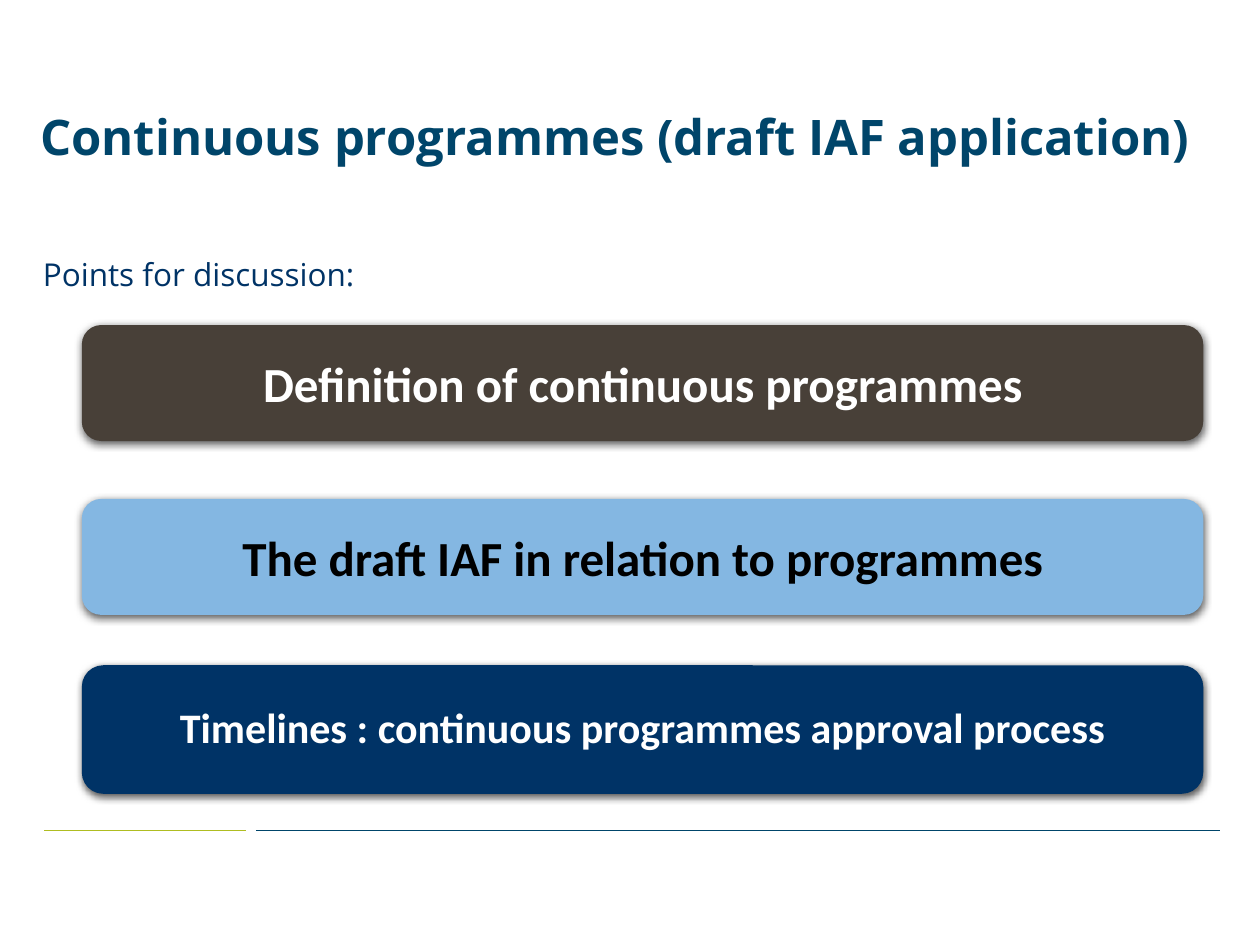
"""Build the slide on points for discussion about continuous programmes."""
from dataclasses import dataclass

from lxml.etree import SubElement
from pptx import Presentation
from pptx.dml.color import RGBColor
from pptx.enum.shapes import MSO_CONNECTOR, MSO_SHAPE
from pptx.enum.text import MSO_ANCHOR, MSO_AUTO_SIZE, PP_ALIGN
from pptx.oxml.ns import qn
from pptx.util import Inches, Pt

NAVY, TEAL, LIME = "003366", "00456A", "AFBD21"
WHITE, BLACK = "FFFFFF", "000000"


@dataclass
class Bar:
    text: str
    top: float
    high: float
    fill: str
    ink: str = WHITE
    size: int = 28
    space: float = 1.0


@dataclass
class Rule:
    left: float
    right: float
    tint: str


BARS = [
    Bar("Definition of continuous programmes", 2.58, 0.92, "484038"),
    Bar("The draft IAF in relation to programmes", 3.96, 0.92, "84B7E2", BLACK),
    Bar("Timelines : continuous programmes approval process", 5.28, 1.02, NAVY,
        size=24, space=0.9),
]
RULES = [Rule(0.35, 1.95, LIME), Rule(2.03, 9.68, TEAL)]


def color(code: str) -> RGBColor:
    return RGBColor.from_string(code)


def write(shape, text: str, *, size: int, ink: str, face: str = "Open Sans",
          bold: bool = False, align=PP_ALIGN.LEFT, anchor=MSO_ANCHOR.TOP,
          space: float = 0.9) -> None:
    frame = shape.text_frame
    frame.word_wrap = True
    frame.auto_size = MSO_AUTO_SIZE.NONE
    frame.vertical_anchor = anchor
    para = frame.paragraphs[0]
    para.alignment = align
    para.line_spacing = space
    para.space_before = Pt(0)
    run = para.add_run()
    run.text = text
    font = run.font
    font.name, font.size, font.bold = face, Pt(size), bold
    font.color.rgb = color(ink)


def place(shape, left: float, top: float, wide: float, high: float) -> None:
    shape.left, shape.top = Inches(left), Inches(top)
    shape.width, shape.height = Inches(wide), Inches(high)


def plain(shape) -> None:
    props = shape.text_frame.paragraphs[0]._p.get_or_add_pPr()
    props.set("marL", "0")
    props.set("indent", "0")
    SubElement(props, qn("a:buNone"))


def shade(shape) -> None:
    shape.shadow.inherit = False
    effects = shape._element.spPr.find(qn("a:effectLst"))
    outer = SubElement(effects, qn("a:outerShdw"), blurRad=str(Pt(4.5)),
                       dist=str(Pt(1.5)), dir="5400000", rotWithShape="0")
    tint = SubElement(outer, qn("a:srgbClr"), val=BLACK)
    SubElement(tint, qn("a:alpha"), val="63000")


def draw_bar(slide, bar: Bar) -> None:
    shape = slide.shapes.add_shape(
        MSO_SHAPE.ROUNDED_RECTANGLE, Inches(0.65), Inches(bar.top),
        Inches(8.9), Inches(bar.high))
    shape.fill.solid()
    shape.fill.fore_color.rgb = color(bar.fill)
    shape.line.fill.background()
    shade(shape)
    write(shape, bar.text, size=bar.size, ink=bar.ink, face="Calibri", bold=True,
          align=PP_ALIGN.CENTER, anchor=MSO_ANCHOR.MIDDLE, space=bar.space)


def draw_rule(slide, rule: Rule) -> None:
    line = slide.shapes.add_connector(
        MSO_CONNECTOR.STRAIGHT, Inches(rule.left), Inches(6.59),
        Inches(rule.right), Inches(6.59))
    line.line.color.rgb = color(rule.tint)
    line.line.width = Pt(0.75)
    SubElement(line._element.spPr, qn("a:effectLst"))


def main() -> None:
    deck = Presentation()
    deck.slide_width, deck.slide_height = Inches(10), Inches(7.5)
    slide = deck.slides.add_slide(deck.slide_layouts[1])
    title, body = slide.shapes.title, slide.placeholders[1]
    place(title, 0.22, 0.68, 9.44, 0.69)
    write(title, "Continuous programmes (draft IAF application)",
          size=28, ink=TEAL, bold=True, anchor=MSO_ANCHOR.BOTTOM)
    place(body, 0.24, 2.01, 9.43, 4.15)
    plain(body)
    write(body, "Points for discussion:", size=18, ink=NAVY)
    for rule in RULES:
        draw_rule(slide, rule)
    for bar in BARS:
        draw_bar(slide, bar)
    deck.save("out.pptx")


if __name__ == "__main__":
    main()
